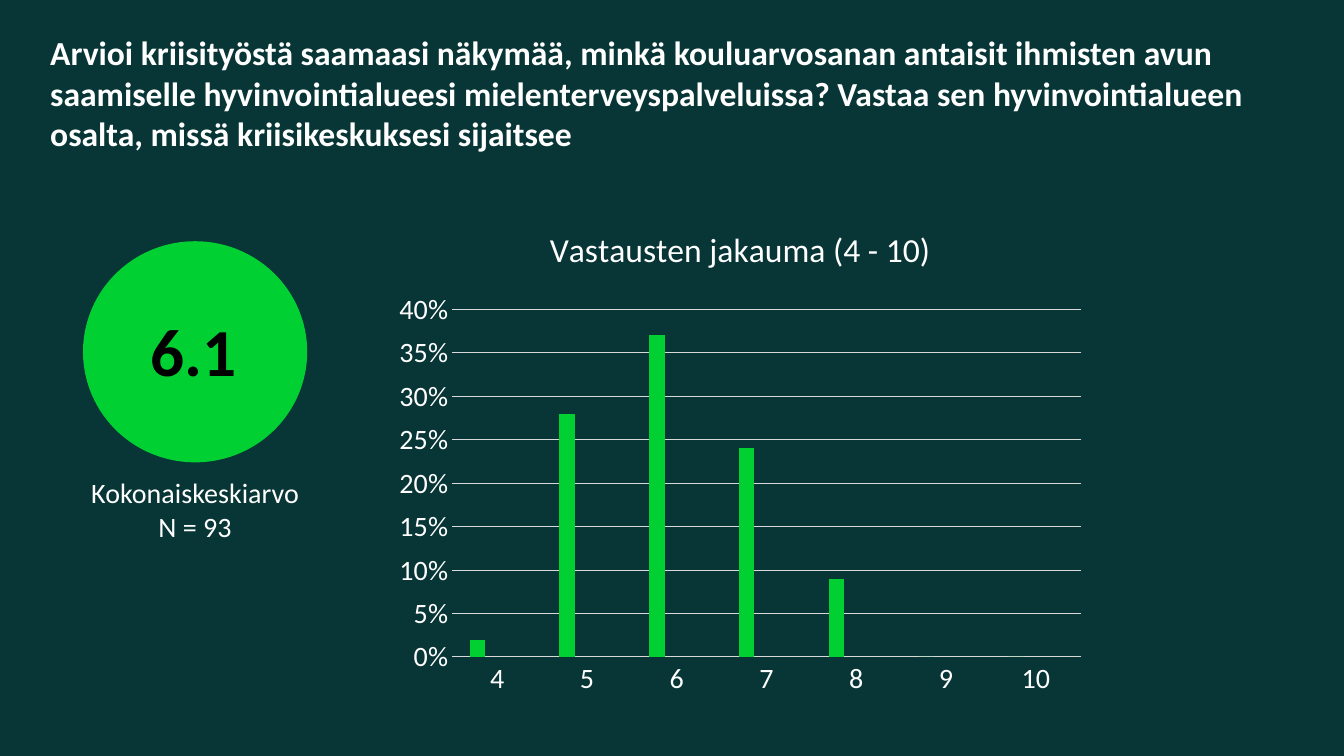
from lxml.etree import SubElement
from pptx import Presentation
from pptx.chart.data import CategoryChartData
from pptx.dml.color import RGBColor
from pptx.enum.chart import XL_CHART_TYPE, XL_TICK_MARK
from pptx.enum.shapes import MSO_SHAPE
from pptx.enum.text import PP_ALIGN
from pptx.oxml.ns import qn
from pptx.util import Inches, Pt

FONT = "Calibri"
DARK = "083535"
GREEN = "00D032"
WHITE = "FFFFFF"
BLACK = "000000"
GRID = "D9D9D9"


def color(code):
    return RGBColor.from_string(code)


class SlideBuilder:
    def __init__(self, presentation):
        self.slide = presentation.slides.add_slide(presentation.slide_layouts[6])
        background = self.slide.background.fill
        background.solid()
        background.fore_color.rgb = color(DARK)

    def style(self, font, size, code=WHITE, bold=False):
        font.name = FONT
        font.size = Pt(size)
        font.bold = bold
        font.color.rgb = color(code)

    def text(self, place, lines, size, code=WHITE, bold=False, align=PP_ALIGN.LEFT):
        frame = self.slide.shapes.add_textbox(*map(Inches, place)).text_frame
        frame.word_wrap = True
        for index, line in enumerate(lines):
            paragraph = frame.add_paragraph() if index else frame.paragraphs[0]
            paragraph.alignment = align
            run = paragraph.add_run()
            run.text = line
            self.style(run.font, size, code, bold)

    def circle(self, place, code):
        circle = self.slide.shapes.add_shape(MSO_SHAPE.OVAL, *map(Inches, place))
        circle.shadow.inherit = False
        circle.fill.solid()
        circle.fill.fore_color.rgb = color(code)
        circle.line.color.rgb = color(code)
        circle.line.width = Pt(1)

    def axis(self, axis):
        axis.major_tick_mark = XL_TICK_MARK.NONE
        axis.minor_tick_mark = XL_TICK_MARK.NONE
        self.style(axis.tick_labels.font, 20)

    def grid_line(self, line):
        line.color.rgb = color(GRID)
        line.width = Pt(0.75)

    def column_chart(self, place, title, grades, series):
        data = CategoryChartData(number_format="0%")
        data.categories = grades
        for name, shares, _ in series:
            data.add_series(name, shares)
        chart = self.slide.shapes.add_chart(
            XL_CHART_TYPE.COLUMN_CLUSTERED, *map(Inches, place), data
        ).chart
        self.style(chart.font, 10, BLACK)
        chart.has_legend = False
        chart.has_title = True
        heading = chart.chart_title.text_frame.paragraphs[0].add_run()
        heading.text = title
        self.style(heading.font, 24)
        overlay = chart.chart_title._element.find(qn("c:overlay"))
        if overlay is None:
            overlay = SubElement(chart.chart_title._element, qn("c:overlay"))
        overlay.set("val", "0")

        plot = chart.plots[0]
        plot.gap_width = 219
        plot.overlap = -27
        plot.vary_by_categories = False
        for columns, (_, _, code) in zip(plot.series, series):
            columns.format.fill.solid()
            columns.format.fill.fore_color.rgb = color(code)

        self.axis(chart.category_axis)
        self.grid_line(chart.category_axis.format.line)
        share_axis = chart.value_axis
        self.axis(share_axis)
        share_axis.format.line.fill.background()
        share_axis.minimum_scale = 0
        share_axis.maximum_scale = 0.4
        share_axis.major_unit = 0.05
        share_axis.tick_labels.number_format = "0%"
        share_axis.tick_labels.number_format_is_linked = False
        share_axis.has_major_gridlines = True
        self.grid_line(share_axis.major_gridlines.format.line)


def main():
    presentation = Presentation()
    presentation.slide_width = Inches(13.33)
    presentation.slide_height = Inches(7.5)
    survey = SlideBuilder(presentation)

    question = (
        "Arvioi kriisityöstä saamaasi näkymää, minkä kouluarvosanan antaisit "
        "ihmisten avun saamiselle hyvinvointialueesi mielenterveyspalveluissa? "
        "Vastaa sen hyvinvointialueen osalta, missä kriisikeskuksesi sijaitsee"
    )
    survey.text((0.4, 0.27, 12.67, 1.09), [question], 24, bold=True)
    survey.circle((0.83, 2.4, 2.21, 2.18), GREEN)
    survey.text((0.73, 4.67, 2.41, 0.77), ["Kokonaiskeskiarvo", "N = 93"], 20,
                align=PP_ALIGN.CENTER)

    grades = [str(grade) for grade in range(4, 11)]
    unanswered = [None] * len(grades)
    survey.column_chart(
        (3.82, 2.04, 7.04, 4.96),
        "Vastausten jakauma (4 - 10)",
        grades,
        [
            ("Series 1", [0.02, 0.28, 0.37, 0.24, 0.09, 0, 0], GREEN),
            ("Series 2", unanswered, "19413D"),
            ("Series 3", unanswered, "C8F5C8"),
        ],
    )
    survey.text((1.39, 3.02, 1.08, 0.91), ["6.1"], 48, BLACK, bold=True)
    presentation.save("out.pptx")


if __name__ == "__main__":
    main()
